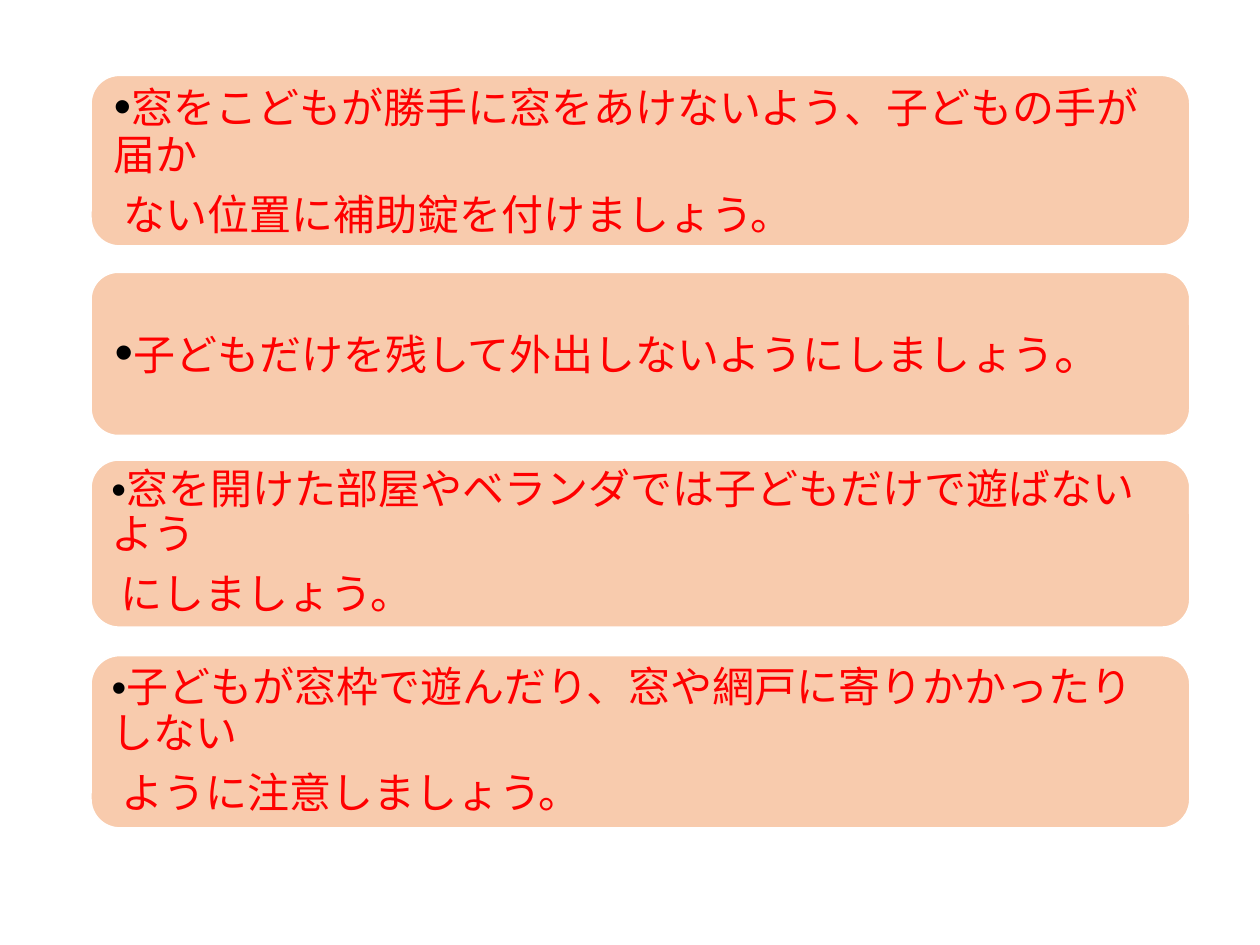
"""Build a slide of four window-safety rules for families with children."""
from dataclasses import dataclass

from pptx import Presentation
from pptx.dml.color import RGBColor
from pptx.enum.shapes import MSO_SHAPE
from pptx.enum.text import MSO_ANCHOR, PP_ALIGN
from pptx.oxml.ns import qn
from pptx.util import Pt

FONT, DOT_FONT = "Calibri", "Arial"
LEFT, WIDTH = 52, 628
SIZE = 24
PEACH, WHITE, RED, BLACK = "F8CBAD", "FFFFFF", "FF0000", "000000"


@dataclass
class Rule:
    top: float
    height: float
    inset: float
    dot_size: float
    lines: list[str]
    stop_size: float = SIZE


RULES = [
    Rule(43, 97.6, 8.4, 28, ["窓をこどもが勝手に窓をあけないよう、子どもの手が届か",
                             " ない位置に補助錠を付けましょう。"]),
    Rule(155.5, 93.4, 9, 30, ["子どもだけを残して外出しないようにしましょう。"], 28),
    Rule(262.8, 95.6, 7.2, 24, ["窓を開けた部屋やベランダでは子どもだけで遊ばないよう",
                                " にしましょう。"]),
    Rule(374.6, 98.6, 7.2, 24, ["子どもが窓枠で遊んだり、窓や網戸に寄りかかったりしない",
                                " ように注意しましょう。"]),
]


def rgb(value: str) -> RGBColor:
    return RGBColor.from_string(value)


def add_run(p, text: str, size: float, color: str, asian: str = FONT) -> None:
    r = p.add_run()
    r.text = text
    r.font.size = Pt(size)
    r.font.color.rgb = rgb(color)
    r.font.name = FONT
    ea = r.font._element.makeelement(qn("a:ea"), {"typeface": asian})
    r.font._element.find(qn("a:latin")).addnext(ea)


def add_rule(s, rule: Rule) -> None:
    sp = s.shapes.add_shape(MSO_SHAPE.ROUNDED_RECTANGLE, Pt(LEFT), Pt(rule.top),
                            Pt(WIDTH), Pt(rule.height))
    sp.shadow.inherit = False
    sp.fill.solid()
    sp.fill.fore_color.rgb = rgb(PEACH)
    sp.line.color.rgb = rgb(WHITE)
    sp.line.width = Pt(1)
    tf = sp.text_frame
    tf.word_wrap = True
    tf.vertical_anchor = MSO_ANCHOR.MIDDLE
    tf.margin_left = tf.margin_right = tf.margin_top = tf.margin_bottom = Pt(rule.inset)
    for i, line in enumerate(rule.lines):
        p = tf.add_paragraph() if i else tf.paragraphs[0]
        p.alignment = PP_ALIGN.LEFT
        p.line_spacing = 0.9
        p.space_after = Pt(SIZE * 0.35)
        if i == 0:
            add_run(p, "•", rule.dot_size, BLACK, DOT_FONT)
        if rule.stop_size == SIZE:
            add_run(p, line, SIZE, RED)
        else:
            add_run(p, line[:-1], SIZE, RED)
            add_run(p, line[-1], rule.stop_size, RED)


def main() -> None:
    prs = Presentation()
    prs.slide_width, prs.slide_height = Pt(720), Pt(540)
    s = prs.slides.add_slide(prs.slide_layouts[6])
    for rule in RULES:
        add_rule(s, rule)
    prs.save("out.pptx")


if __name__ == "__main__":
    main()
